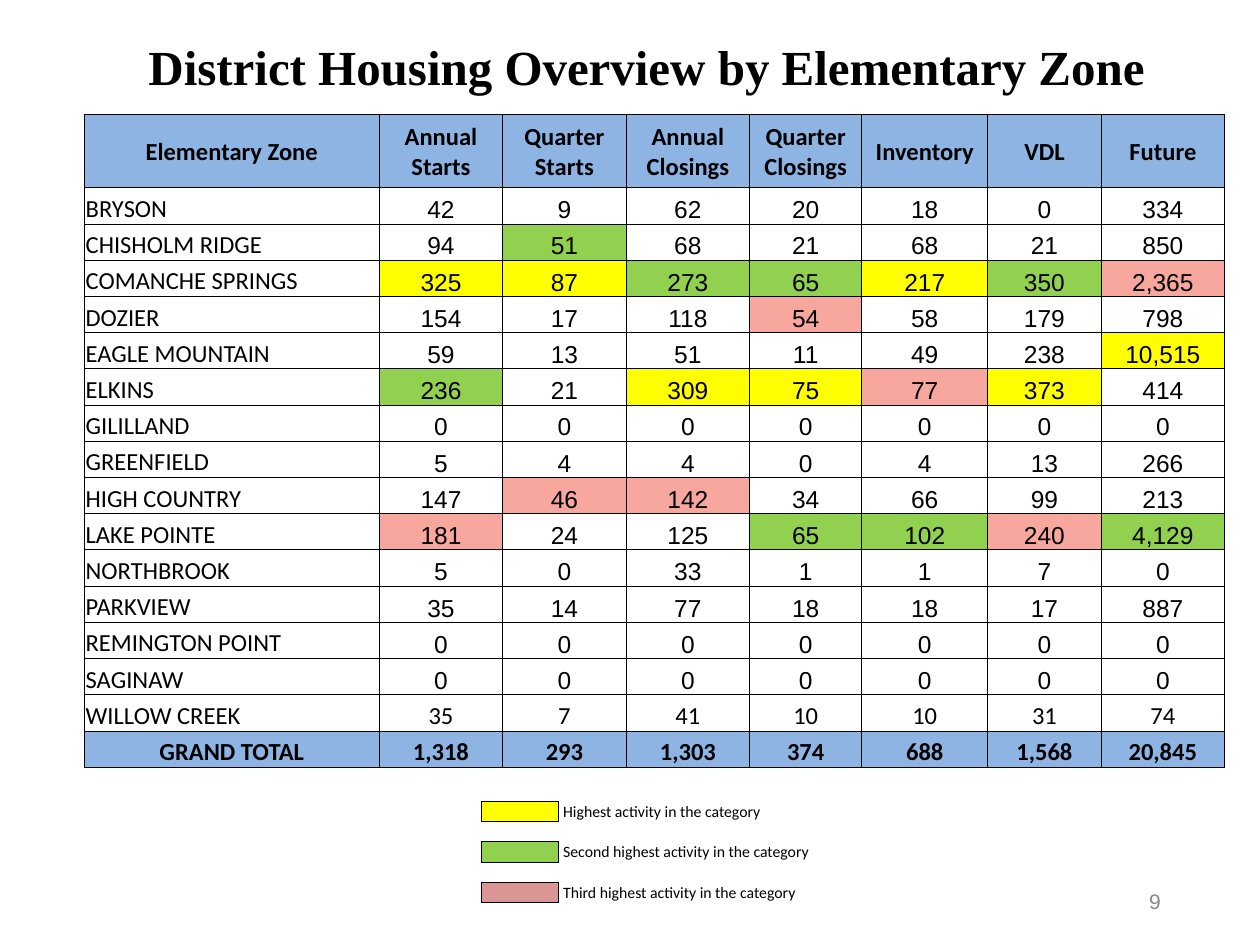
"""Build the district housing overview slide with its ranked table and legend."""
from lxml import etree
from pptx import Presentation
from pptx.dml.color import RGBColor
from pptx.enum.text import MSO_ANCHOR, PP_ALIGN
from pptx.oxml.ns import qn
from pptx.util import Inches, Pt

LEFT, CENTER, RIGHT = PP_ALIGN.LEFT, PP_ALIGN.CENTER, PP_ALIGN.RIGHT
MIDDLE, BOTTOM = MSO_ANCHOR.MIDDLE, MSO_ANCHOR.BOTTOM

BLACK = RGBColor(0x00, 0x00, 0x00)
WHITE = RGBColor(0xFF, 0xFF, 0xFF)
GRAY = RGBColor(0x89, 0x89, 0x89)
BLUE = RGBColor(0x8D, 0xB4, 0xE2)
YELLOW = RGBColor(0xFF, 0xFF, 0x00)
GREEN = RGBColor(0x92, 0xD0, 0x50)
SALMON = RGBColor(0xF8, 0xA7, 0x9E)
ROSE = RGBColor(0xDA, 0x96, 0x94)

TITLE = "District Housing Overview by Elementary Zone"
PAGE_NUMBER = "9"
HEADINGS = ["Elementary Zone", "Annual Starts", "Quarter Starts", "Annual Closings",
            "Quarter Closings", "Inventory", "VDL", "Future"]
ZONES = [
    ("BRYSON", 42, 9, 62, 20, 18, 0, 334),
    ("CHISHOLM RIDGE", 94, 51, 68, 21, 68, 21, 850),
    ("COMANCHE SPRINGS", 325, 87, 273, 65, 217, 350, 2365),
    ("DOZIER", 154, 17, 118, 54, 58, 179, 798),
    ("EAGLE MOUNTAIN", 59, 13, 51, 11, 49, 238, 10515),
    ("ELKINS", 236, 21, 309, 75, 77, 373, 414),
    ("GILILLAND", 0, 0, 0, 0, 0, 0, 0),
    ("GREENFIELD", 5, 4, 4, 0, 4, 13, 266),
    ("HIGH COUNTRY", 147, 46, 142, 34, 66, 99, 213),
    ("LAKE POINTE", 181, 24, 125, 65, 102, 240, 4129),
    ("NORTHBROOK", 5, 0, 33, 1, 1, 7, 0),
    ("PARKVIEW", 35, 14, 77, 18, 18, 17, 887),
    ("REMINGTON POINT", 0, 0, 0, 0, 0, 0, 0),
    ("SAGINAW", 0, 0, 0, 0, 0, 0, 0),
    ("WILLOW CREEK", 35, 7, 41, 10, 10, 31, 74),
]
TOTALS = ("GRAND TOTAL", 1318, 293, 1303, 374, 688, 1568, 20845)
LEGEND = [
    (YELLOW, "Highest activity in the category"),
    (GREEN, "Second highest activity in the category"),
    (ROSE, "Third highest activity in the category"),
]
RANK_FILLS = [YELLOW, GREEN, SALMON]

ZONE_WIDTHS = [2.34, 0.98, 0.98, 0.98, 0.89, 1, 0.9, 0.98]
ZONE_HEIGHTS = [0.58] + [4.6 / (len(ZONES) + 1)] * (len(ZONES) + 1)
LEGEND_WIDTHS = [0.61, 2.14]
LEGEND_HEIGHTS = [0.16] * (2 * len(LEGEND) - 1)


def write(paragraph, text, size, font, color=BLACK, bold=False, align=LEFT):
    paragraph.alignment = align
    run = paragraph.add_run()
    run.text = text
    run.font.size = Pt(size)
    run.font.name = font
    run.font.bold = bold
    run.font.color.rgb = color


def add_label(slide, place, text, size, font, **style):
    frame = slide.shapes.add_textbox(*map(Inches, place)).text_frame
    frame.word_wrap = True
    frame.vertical_anchor = MIDDLE
    write(frame.paragraphs[0], text, size, font, **style)
    return frame.paragraphs[0]


def add_grid(slide, left, top, widths, heights):
    frame = slide.shapes.add_table(len(heights), len(widths), Inches(left), Inches(top),
                                   Inches(sum(widths)), Inches(sum(heights)))
    grid = frame.table
    grid.first_row = grid.horz_banding = False
    for column, width in zip(grid.columns, widths):
        column.width = Inches(width)
    for row, height in zip(grid.rows, heights):
        row.height = Inches(height)
    return grid


def style_cell(cell, fill=None, edges="LRTB", anchor=BOTTOM, indent=0.01):
    cell.margin_left = Inches(indent)
    cell.margin_right = cell.margin_top = Inches(0.01)
    cell.margin_bottom = 0
    cell.vertical_anchor = anchor
    if fill is None:
        cell.fill.background()
    else:
        cell.fill.solid()
        cell.fill.fore_color.rgb = fill
    properties = cell._tc.get_or_add_tcPr()
    for position, side in enumerate("LRTB"):
        line = etree.Element(qn(f"a:ln{side}"), w=str(Pt(0.5)))
        if side in edges:
            paint = etree.SubElement(line, qn("a:solidFill"))
            etree.SubElement(paint, qn("a:srgbClr"), val=str(BLACK))
        else:
            etree.SubElement(line, qn("a:noFill"))
        properties.insert(position, line)


def add_zone_table(slide):
    grid = add_grid(slide, 0.67, 0.91, ZONE_WIDTHS, ZONE_HEIGHTS)
    leaders = [sorted(set(values), reverse=True)[:len(RANK_FILLS)]
               for values in list(zip(*ZONES))[1:]]
    last_zone = len(ZONES)
    for r, entries in enumerate([HEADINGS, *ZONES, TOTALS]):
        banner = r in (0, last_zone + 1)
        for c, entry in enumerate(entries):
            text = entry if isinstance(entry, str) else f"{entry:,}"
            fill = BLUE if banner else WHITE if c == 0 else None
            if not banner and c and entry in leaders[c - 1]:
                fill = RANK_FILLS[leaders[c - 1].index(entry)]
            font = "Calibri" if banner or c == 0 or r == last_zone else "Arial"
            cell = grid.cell(r, c)
            style_cell(cell, fill, anchor=MIDDLE if r == 0 else BOTTOM)
            write(cell.text_frame.paragraphs[0], text, 14, font, bold=banner,
                  align=CENTER if banner or c else LEFT)


def add_legend(slide):
    grid = add_grid(slide, 3.82, 6.36, LEGEND_WIDTHS, LEGEND_HEIGHTS)
    for r in range(len(LEGEND_HEIGHTS)):
        swatch, meaning = grid.cell(r, 0), grid.cell(r, 1)
        empty = [swatch]
        if r % 2:
            style_cell(swatch, WHITE, edges="TB")
            style_cell(meaning, edges="")
            empty.append(meaning)
        else:
            color, text = LEGEND[r // 2]
            style_cell(swatch, color)
            style_cell(meaning, edges="L", indent=0.04)
            write(meaning.text_frame.paragraphs[0], text, 9, "Calibri")
        for cell in empty:
            etree.SubElement(cell.text_frame.paragraphs[0]._p, qn("a:endParaRPr"), sz="900")


def main():
    deck = Presentation()
    deck.slide_width, deck.slide_height = Inches(10), Inches(7.5)
    slide = deck.slides.add_slide(deck.slide_layouts[6])
    title = add_label(slide, (1.08, 0.25, 8.62, 0.6), TITLE, 28, "Times New Roman", bold=True)
    title.line_spacing = 0.9
    add_label(slide, (7.06, 6.95, 2.25, 0.4), PAGE_NUMBER, 12, "Arial", color=GRAY, align=RIGHT)
    add_legend(slide)
    add_zone_table(slide)
    deck.save("out.pptx")


if __name__ == "__main__":
    main()
